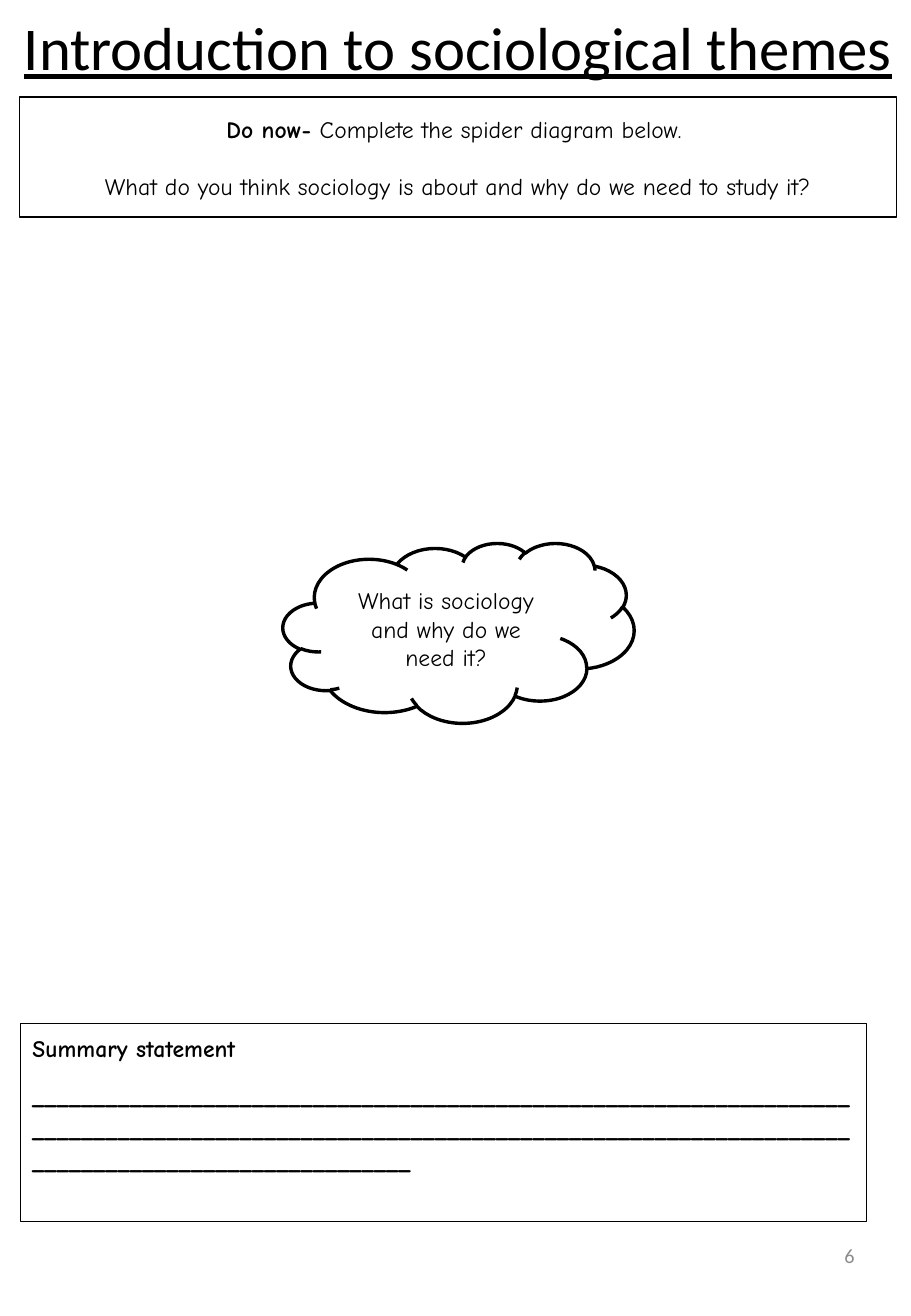
"""Build a sociology worksheet page with a starter task, a spider diagram and a summary box."""
from pptx import Presentation
from pptx.dml.color import RGBColor
from pptx.enum.shapes import MSO_SHAPE
from pptx.enum.text import MSO_ANCHOR, PP_ALIGN
from pptx.util import Cm, Pt

BLACK, WHITE, GREY = "000000", "FFFFFF", "8C8C8C"
HEADING_FONT, BODY_FONT = "Calibri", "Comic Neue"
PAGE_SIZE = (19.05, 27.51)

TITLE = [[("Introduction to sociological themes", False)]]
PAGE_NUMBER = [[("6", False)]]
DO_NOW = [
    [("Do now- ", True), ("Complete the spider diagram below. ", False)],
    [(" What do you think sociology is about and why do we need to study it? ", False)],
]
QUESTION = [[("What is sociology and why do we need it?", False)]]
SUMMARY = [[("Summary statement", True)], [("_" * 165, True)]]

TITLE_BOX = (0.08, -0.1, 19, 2.13)
PAGE_NUMBER_BOX = (13.67, 25.5, 4.45, 1.47)
DO_NOW_BOX = (0.41, 2.03, 18.34, 2.51)
QUESTION_BOX = (5.92, 11.35, 7.34, 3.76)
SUMMARY_BOX = (0.43, 21.39, 17.68, 4.14)


def color(hex_code):
    return RGBColor.from_string(hex_code)


def write(shape, paragraphs, font=BODY_FONT, size=14, ink=BLACK,
          align=PP_ALIGN.CENTER, anchor=MSO_ANCHOR.MIDDLE, underline=None):
    frame = shape.text_frame
    frame.word_wrap = True
    frame.vertical_anchor = anchor
    for index, pieces in enumerate(paragraphs):
        paragraph = frame.add_paragraph() if index else frame.paragraphs[0]
        paragraph.alignment = align
        for text, bold in pieces:
            run = paragraph.add_run()
            run.text = text
            run.font.name, run.font.size = font, Pt(size)
            run.font.bold, run.font.underline = bold, underline
            run.font.color.rgb = color(ink)
    return frame.paragraphs


def add_outline(slide, kind, box, line_width, fill=None):
    shape = slide.shapes.add_shape(kind, *map(Cm, box))
    shape.shadow.inherit = False
    if fill:
        shape.fill.solid()
        shape.fill.fore_color.rgb = color(fill)
    else:
        shape.fill.background()
    shape.line.color.rgb = color(BLACK)
    shape.line.width = Pt(line_width)
    return shape


def main():
    deck = Presentation()
    deck.slide_width, deck.slide_height = map(Cm, PAGE_SIZE)
    slide = deck.slides.add_slide(deck.slide_layouts[6])

    page_number = slide.shapes.add_textbox(*map(Cm, PAGE_NUMBER_BOX))
    write(page_number, PAGE_NUMBER, HEADING_FONT, 12, GREY, PP_ALIGN.RIGHT)
    title = slide.shapes.add_textbox(*map(Cm, TITLE_BOX))
    write(title, TITLE, HEADING_FONT, 36, underline=True)

    do_now = add_outline(slide, MSO_SHAPE.RECTANGLE, DO_NOW_BOX, 0.75, WHITE)
    write(do_now, DO_NOW)[1].space_before = Pt(17)

    question = add_outline(slide, MSO_SHAPE.CLOUD, QUESTION_BOX, 2)
    write(question, QUESTION)

    summary = add_outline(slide, MSO_SHAPE.RECTANGLE, SUMMARY_BOX, 0.5, WHITE)
    for paragraph in write(summary, SUMMARY, align=PP_ALIGN.LEFT, anchor=MSO_ANCHOR.TOP):
        paragraph.line_spacing = 1.15
        paragraph.space_after = Pt(10)

    deck.save("out.pptx")


if __name__ == "__main__":
    main()
